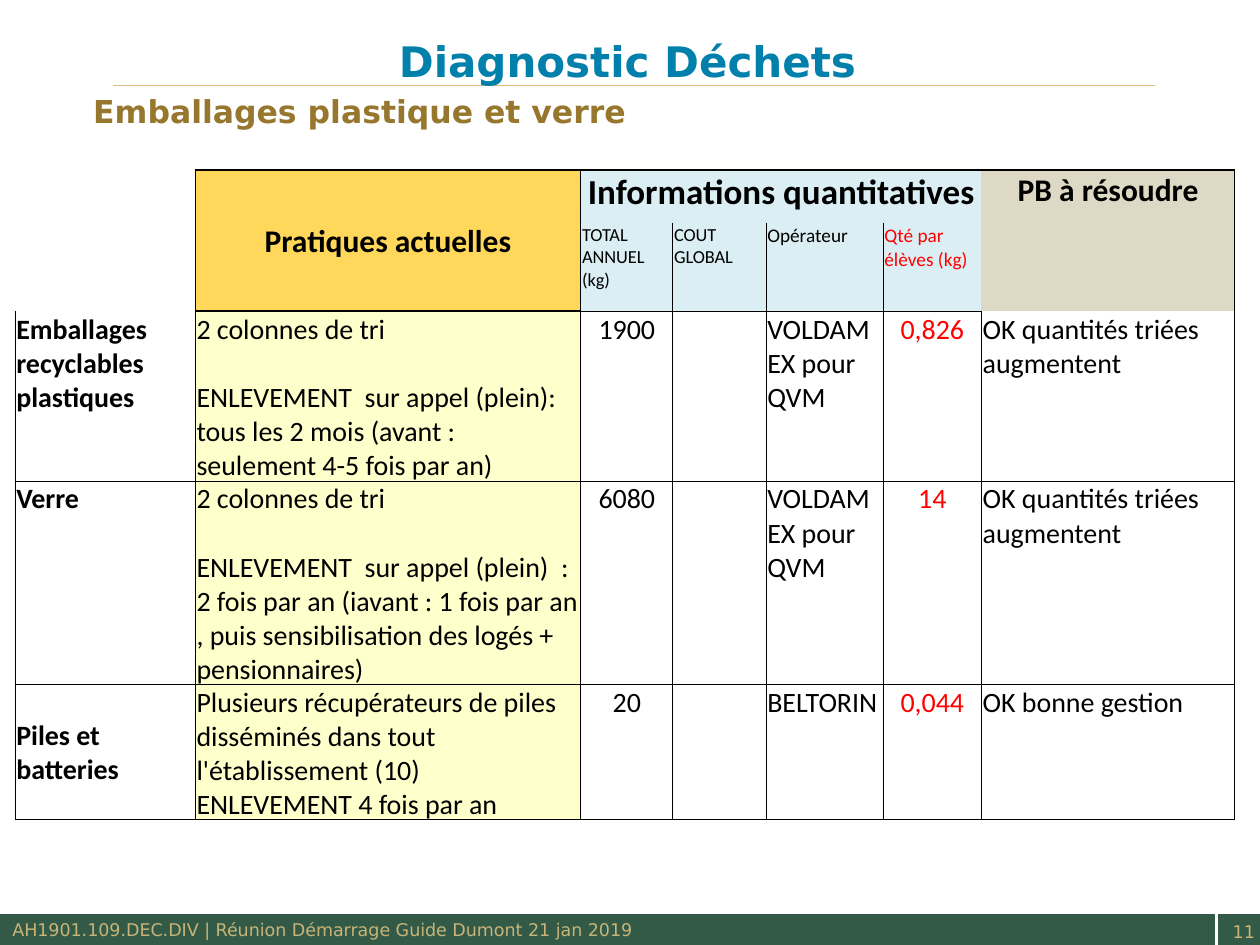
from lxml.etree import SubElement
from pptx import Presentation
from pptx.dml.color import RGBColor
from pptx.enum.shapes import MSO_CONNECTOR, MSO_SHAPE
from pptx.enum.text import MSO_ANCHOR, PP_ALIGN
from pptx.oxml.ns import qn
from pptx.util import Inches, Pt

LEFT, CENTER, RIGHT = PP_ALIGN.LEFT, PP_ALIGN.CENTER, PP_ALIGN.RIGHT
TOP, MIDDLE, BOTTOM = MSO_ANCHOR.TOP, MSO_ANCHOR.MIDDLE, MSO_ANCHOR.BOTTOM
BLACK, RED = "000000", "FF0000"
GREEN, SAND = "325A46", "C8B478"
color = RGBColor.from_string


def write(holder, text, font, size, hue, bold=False, align=LEFT, anchor=TOP, margins=(0.1, 0.05, 0.1, 0.05)):
    """Fill a shape or a table cell with formatted text."""
    frame = holder.text_frame
    frame.word_wrap = True
    frame.text = text
    target = holder if hasattr(holder, "margin_left") else frame
    target.vertical_anchor = anchor
    target.margin_left, target.margin_top, target.margin_right, target.margin_bottom = map(Inches, margins)
    for paragraph in frame.paragraphs:
        paragraph.alignment = align
        for run in paragraph.runs:
            run.font.name, run.font.size, run.font.bold = font, Pt(size), bold
            run.font.color.rgb = color(hue)


def style_cell(cell, fill, edges):
    """Draw the given edges (L, R, T, B: width in points), then the fill."""
    properties = cell._tc.get_or_add_tcPr()
    for side in "LRTB":
        line = SubElement(properties, qn(f"a:ln{side}"), w=str(Pt(edges.get(side, 0))))
        if side in edges:
            SubElement(SubElement(line, qn("a:solidFill")), qn("a:srgbClr"), val=BLACK)
        else:
            SubElement(line, qn("a:noFill"))
    if fill:
        cell.fill.solid()
        cell.fill.fore_color.rgb = color(fill)
    else:
        cell.fill.background()


presentation = Presentation()
presentation.slide_width, presentation.slide_height = Inches(10), Inches(7.5)
slide = presentation.slides.add_slide(presentation.slide_layouts[6])

# Rule under the title
rule = slide.shapes.add_connector(MSO_CONNECTOR.STRAIGHT, Inches(0.9), Inches(0.68), Inches(9.17), Inches(0.68))
rule.line.color.rgb = color("D8BC7E")
rule.line.width = Pt(0.75)
SubElement(rule._element.spPr, qn("a:effectLst"))

# Footer bars
footers = [
    (0, 9.64, "AH1901.109.DEC.DIV | Réunion Démarrage Guide Dumont 21 jan 2019", LEFT, MIDDLE, (0.1, 0.05, 0.1, 0.05)),
    (9.67, 0.33, "11", RIGHT, TOP, (0.02, 0.05, 0.04, 0.05)),
]
for left, width, text, align, anchor, margins in footers:
    shape = slide.shapes.add_shape(MSO_SHAPE.RECTANGLE, Inches(left), Inches(7.26), Inches(width), Inches(0.24))
    shape.shadow.inherit = False
    shape.fill.solid()
    shape.fill.fore_color.rgb = color(GREEN)
    shape.line.color.rgb = color(GREEN)
    shape.line.width = Pt(0.75)
    write(shape, text, "DejaVu Sans", 10, SAND, align=align, anchor=anchor, margins=margins)

# Subtitle and title
subtitle = slide.shapes.add_textbox(0, Inches(0.68), Inches(10), Inches(5.98))
write(subtitle, "Emballages plastique et verre", "DejaVu Sans", 18, "97762D", True, margins=(0.74, 0.05, 0.1, 0.05))
title = slide.shapes.add_textbox(Inches(0.67), 0, Inches(8.62), Inches(0.68))
write(title, "Diagnostic Déchets", "DejaVu Sans", 24, "0080AA", True, CENTER, BOTTOM, (0.08, 0, 0.08, 0))

# Table grid
column_widths = [1.43, 3.06, 0.73, 0.74, 0.93, 0.78, 2.01]
row_heights = [0.42, 0.7, 1.33, 1.6, 1.07]
frame = slide.shapes.add_table(5, 7, Inches(0.12), Inches(1.35), Inches(sum(column_widths)), Inches(sum(row_heights)))
table = frame.table
table.first_row = table.horz_banding = False
for column, width in zip(table.columns, column_widths):
    column.width = Inches(width)
for row, height in zip(table.rows, row_heights):
    row.height = Inches(height)

# Fills and borders, header rows first
BLUE, GOLD, BEIGE, YELLOW = "DAEEF3", "FFD85B", "DDD9C4", "FFFFCC"
practice_edges = {"L": 1, "T": 1, "R": 0.5, "B": 1}
for row in range(2):
    style_cell(table.cell(row, 0), "FFFFFF" if row == 0 else None, {"R": 1})
    style_cell(table.cell(row, 1), GOLD, practice_edges)
    style_cell(table.cell(row, 6), BEIGE, {"T": 1, "R": 1} if row == 0 else {"R": 1})
for column in range(2, 6):
    style_cell(table.cell(0, column), BLUE, {"L": 0.5, "T": 1} if column == 2 else {"T": 1})
    sides = "LB" if column == 5 else "LRB"
    style_cell(table.cell(1, column), BLUE, {side: 0.5 for side in sides})
for row in range(2, 5):
    for column in range(7):
        edges = {side: 0.5 for side in "LRTB"}
        if column in (0, 6):
            edges["R"] = 1
            if row == 2:
                del edges["T"]
        if column == 1:
            edges["L"] = 1
            if row == 2:
                edges["T"] = 1
        style_cell(table.cell(row, column), {1: YELLOW, 5: "FFFFFF"}.get(column), edges)

table.cell(0, 1).merge(table.cell(1, 1))
table.cell(0, 2).merge(table.cell(0, 5))
table.cell(0, 6).merge(table.cell(1, 6))

# Header texts
CELL_MARGINS = (0.01, 0.01, 0.01, 0)
headers = [
    (0, 1, "Pratiques actuelles", 18, BLACK, True, CENTER, MIDDLE),
    (0, 2, "Informations quantitatives", 20, BLACK, True, CENTER, TOP),
    (0, 6, "PB à résoudre", 18, BLACK, True, CENTER, TOP),
    (1, 2, "TOTAL ANNUEL (kg)", 10.5, BLACK, False, LEFT, TOP),
    (1, 3, "COUT GLOBAL", 10.5, BLACK, False, LEFT, TOP),
    (1, 4, "Opérateur", 11, BLACK, False, LEFT, TOP),
    (1, 5, "Qté par élèves (kg)", 11, RED, False, LEFT, TOP),
]
for row, column, text, size, hue, bold, align, anchor in headers:
    write(table.cell(row, column), text, "Calibri", size, hue, bold, align, anchor, CELL_MARGINS)

# Body texts
body = [
    ["Emballages recyclables plastiques",
     "2 colonnes de tri\nENLEVEMENT  sur appel (plein): tous les 2 mois (avant : seulement 4-5 fois par an)",
     "1900", "", "VOLDAMEX pour QVM", "0,826", "OK quantités triées augmentent"],
    ["Verre",
     "2 colonnes de tri\nENLEVEMENT  sur appel (plein)  : 2 fois par an (iavant : 1 fois par an , "
     "puis sensibilisation des logés + pensionnaires)",
     "6080", "", "VOLDAMEX pour QVM", "14", "OK quantités triées augmentent"],
    ["Piles et batteries",
     "Plusieurs récupérateurs de piles disséminés dans tout l'établissement (10)\nENLEVEMENT 4 fois par an",
     "20", "", "BELTORIN", "0,044", "OK bonne gestion"],
]
for row, texts in enumerate(body, start=2):
    for column, text in enumerate(texts):
        align = CENTER if column in (2, 5) else LEFT
        anchor = MIDDLE if row == 4 and column < 2 else TOP
        write(table.cell(row, column), text, "Calibri", 16, RED if column == 5 else BLACK,
              column == 0, align, anchor, CELL_MARGINS)
    if row < 4:
        # One line of space before the collection details
        table.cell(row, 1).text_frame.paragraphs[1].space_before = Pt(19.5)

presentation.save("out.pptx")
